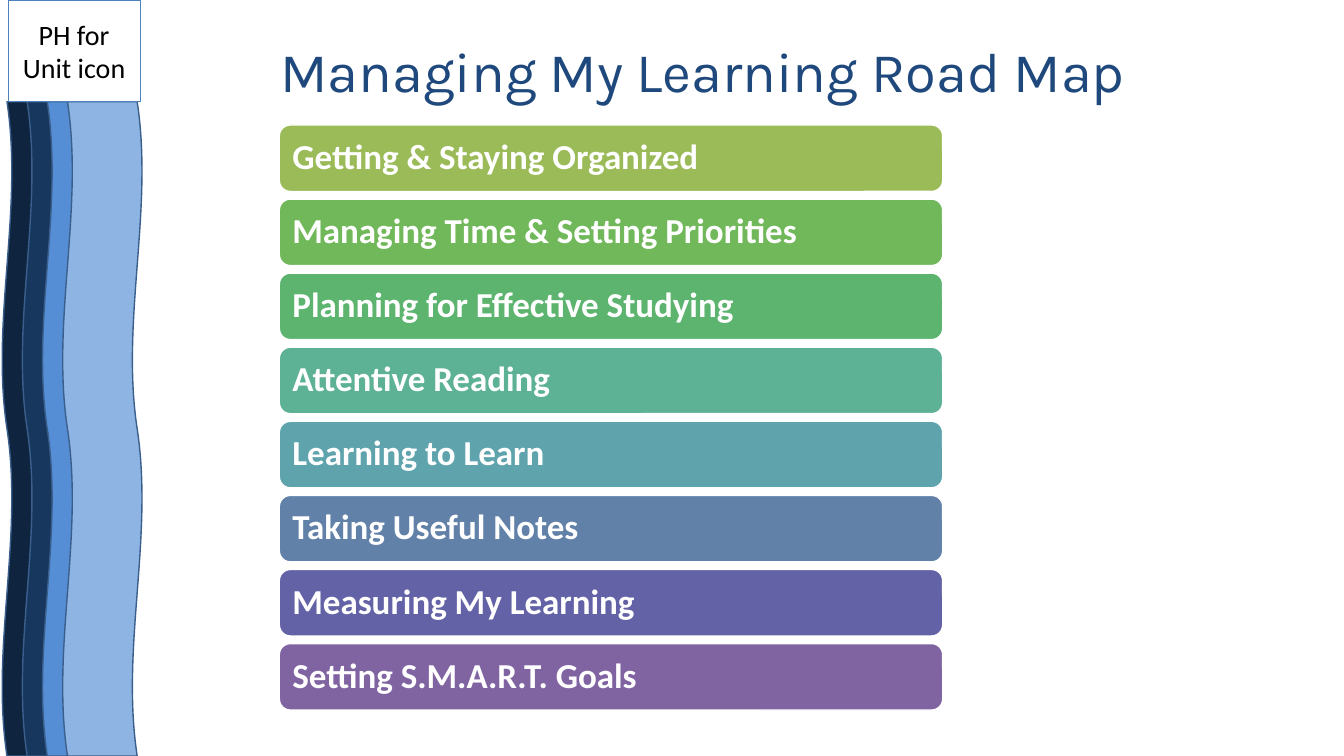
from pptx import Presentation
from pptx.dml.color import RGBColor
from pptx.enum.shapes import MSO_SHAPE
from pptx.enum.text import MSO_ANCHOR, MSO_AUTO_SIZE, PP_ALIGN
from pptx.util import Inches, Pt

RECTANGLE = MSO_SHAPE.RECTANGLE
ROUNDED = MSO_SHAPE.ROUNDED_RECTANGLE
WAVE = MSO_SHAPE.DOUBLE_WAVE
MIDDLE = MSO_ANCHOR.MIDDLE
LEFT, CENTER = PP_ALIGN.LEFT, PP_ALIGN.CENTER

# Content
TITLE = "Managing My Learning Road Map"
ICON_LABEL = "PH for Unit icon"
TOPICS = [
    ("Getting & Staying Organized", "9BBB59"),
    ("Managing Time & Setting Priorities", "70B85A"),
    ("Planning for Effective Studying", "5CB46F"),
    ("Attentive Reading", "5DB195"),
    ("Learning to Learn", "5FA4AD"),
    ("Taking Useful Notes", "6181A9"),
    ("Measuring My Learning", "6362A6"),
    ("Setting S.M.A.R.T. Goals", "8064A2"),
]
WAVE_COLORS = ["0F243E", "17375E", "558ED5", "8EB4E3"]

# Layout in inches
WAVE_LEFT, WAVE_TOP, WAVE_LENGTH, WAVE_DEPTH, WAVE_STEP = -2.83, 3.86, 6.49, 0.79, 0.2
BAR_LEFT, BAR_TOP, BAR_WIDTH, BAR_HEIGHT, BAR_PITCH = 2.77, 1.24, 6.58, 0.66, 0.735


def rgb(hex_color):
    return RGBColor.from_string(hex_color)


def add_block(slide, kind, box, fill, line, line_width):
    block = slide.shapes.add_shape(kind, *map(Inches, box))
    block.shadow.inherit = False
    if fill:
        block.fill.solid()
        block.fill.fore_color.rgb = rgb(fill)
    else:
        block.fill.background()
    block.line.color.rgb = rgb(line)
    block.line.width = Pt(line_width)
    return block


def write(shape, words, font, size, color, align, bold=False, spacing=None):
    frame = shape.text_frame
    frame.word_wrap = True
    frame.auto_size = MSO_AUTO_SIZE.NONE
    frame.vertical_anchor = MIDDLE
    paragraph = frame.paragraphs[0]
    paragraph.alignment = align
    if spacing:
        paragraph.line_spacing = spacing
    run = paragraph.add_run()
    run.text = words
    run.font.name = font
    run.font.size = Pt(size)
    run.font.bold = bold
    run.font.color.rgb = rgb(color)


def main():
    prs = Presentation()
    prs.slide_width, prs.slide_height = Inches(13.33), Inches(7.5)
    slide = prs.slides.add_slide(prs.slide_layouts[5])
    slide.background.fill.solid()
    slide.background.fill.fore_color.rgb = rgb("FFFFFF")

    # Wavy side band
    for i, color in enumerate(WAVE_COLORS):
        box = (WAVE_LEFT + i * WAVE_STEP, WAVE_TOP, WAVE_LENGTH, WAVE_DEPTH)
        wave = add_block(slide, WAVE, box, color, "3A5F8C", 1)
        wave.rotation = 270

    # Unit icon box
    icon = add_block(slide, RECTANGLE, (0.08, 0, 1.31, 1.01), None, "4F81BD", 0.75)
    write(icon, ICON_LABEL, "Calibri", 20, "000000", CENTER)

    # Title
    title = slide.shapes.title
    title.left, title.top = Inches(2.68), Inches(0.33)
    title.width, title.height = Inches(10.29), Inches(0.81)
    write(title, TITLE, "Karla", 40, "1F497D", LEFT, spacing=0.9)

    # Topic bars
    for i, (topic, color) in enumerate(TOPICS):
        box = (BAR_LEFT, BAR_TOP + i * BAR_PITCH, BAR_WIDTH, BAR_HEIGHT)
        bar = add_block(slide, ROUNDED, box, color, "FFFFFF", 1)
        write(bar, topic, "Calibri", 25, "FFFFFF", LEFT, bold=True, spacing=0.9)

    prs.save("out.pptx")


if __name__ == "__main__":
    main()
